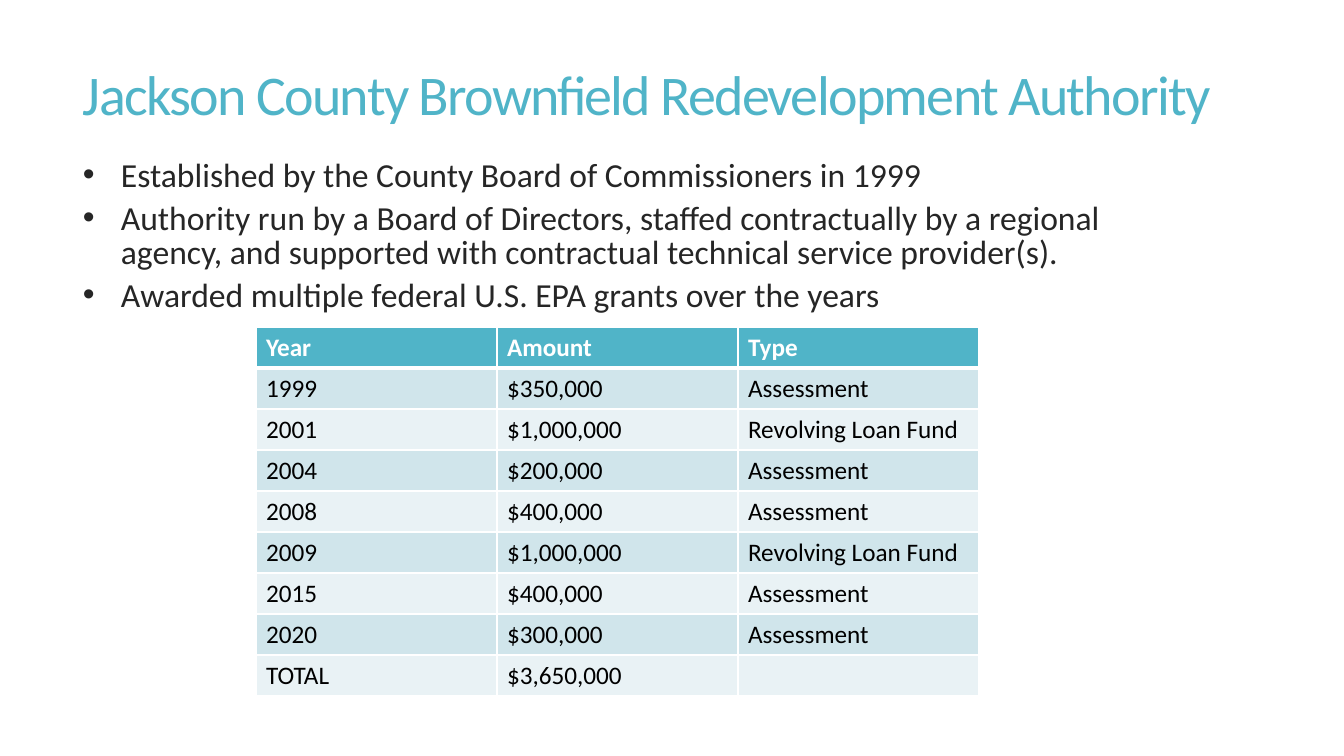
"""Build the Jackson County Brownfield Redevelopment Authority slide."""
from lxml.etree import SubElement
from pptx import Presentation
from pptx.dml.color import RGBColor
from pptx.enum.text import MSO_ANCHOR
from pptx.oxml import parse_xml
from pptx.oxml.ns import nsdecls, qn
from pptx.util import Pt

SCALE = 914400 / 100.8
TEAL, WHITE, BLACK, CHARCOAL = "50B4C8", "FFFFFF", "000000", "262626"
BANDS = ["E9F2F5", "D0E5EB"]


def px(length):
    return round(length * SCALE)


def set_font(paragraph, size, color, bold=False):
    font = paragraph.font
    font.name, font.size, font.bold = "Calibri", Pt(size), bold
    font.color.rgb = RGBColor.from_string(color)


presentation = Presentation()
presentation.slide_width, presentation.slide_height = px(1344), px(756)
slide = presentation.slides.add_slide(presentation.slide_layouts[6])

title = slide.shapes.add_textbox(px(73), px(55), px(1187), px(86)).text_frame
title.word_wrap = True
title.vertical_anchor = MSO_ANCHOR.MIDDLE
paragraph = title.paragraphs[0]
run = paragraph.add_run()
run.text = "Jackson County Brownfield Redevelopment Authority"
run.font._element.set("spc", "-120")
paragraph.line_spacing = 0.85
set_font(paragraph, 40, TEAL)

points = [
    "Established by the County Board of Commissioners in 1999",
    "Authority run by a Board of Directors, staffed contractually by a regional "
    "agency, and supported with contractual technical service provider(s).",
    "Awarded multiple federal U.S. EPA grants over the years",
]
body = slide.shapes.add_textbox(px(73), px(155), px(1116), px(519)).text_frame
body.word_wrap = True
for index, point in enumerate(points):
    paragraph = body.paragraphs[0] if index == 0 else body.add_paragraph()
    paragraph.text = point
    paragraph.line_spacing = 0.85
    if index:
        paragraph.space_before = Pt(6)
    properties = paragraph._p.get_or_add_pPr()
    properties.set("marL", str(px(38)))
    properties.set("indent", str(px(-38)))
    SubElement(properties, qn("a:buFont"), typeface="Arial")
    SubElement(properties, qn("a:buChar"), char="•")
    set_font(paragraph, 24, CHARCOAL)

grants = [
    ("Year", "Amount", "Type"),
    ("1999", "$350,000", "Assessment"),
    ("2001", "$1,000,000", "Revolving Loan Fund"),
    ("2004", "$200,000", "Assessment"),
    ("2008", "$400,000", "Assessment"),
    ("2009", "$1,000,000", "Revolving Loan Fund"),
    ("2015", "$400,000", "Assessment"),
    ("2020", "$300,000", "Assessment"),
    ("TOTAL", "$3,650,000", ""),
]
table = slide.shapes.add_table(
    len(grants), 3, px(256), px(327), px(3 * 241), px(len(grants) * 41)
).table
for row_index, grant in enumerate(grants):
    header = row_index == 0
    for column_index, text in enumerate(grant):
        cell = table.cell(row_index, column_index)
        cell.text = text
        set_font(cell.text_frame.paragraphs[0], 18, WHITE if header else BLACK, header)
        properties = cell._tc.get_or_add_tcPr()
        for side in "LRTB":
            thick = (row_index, side) in [(0, "B"), (1, "T")]
            properties.append(parse_xml(
                f'<a:ln{side} {nsdecls("a")} w="{Pt(3 if thick else 1)}"><a:solidFill>'
                f'<a:srgbClr val="{WHITE}"/></a:solidFill></a:ln{side}>'
            ))
        cell.fill.solid()
        cell.fill.fore_color.rgb = RGBColor.from_string(TEAL if header else BANDS[row_index % 2])

presentation.save("out.pptx")
